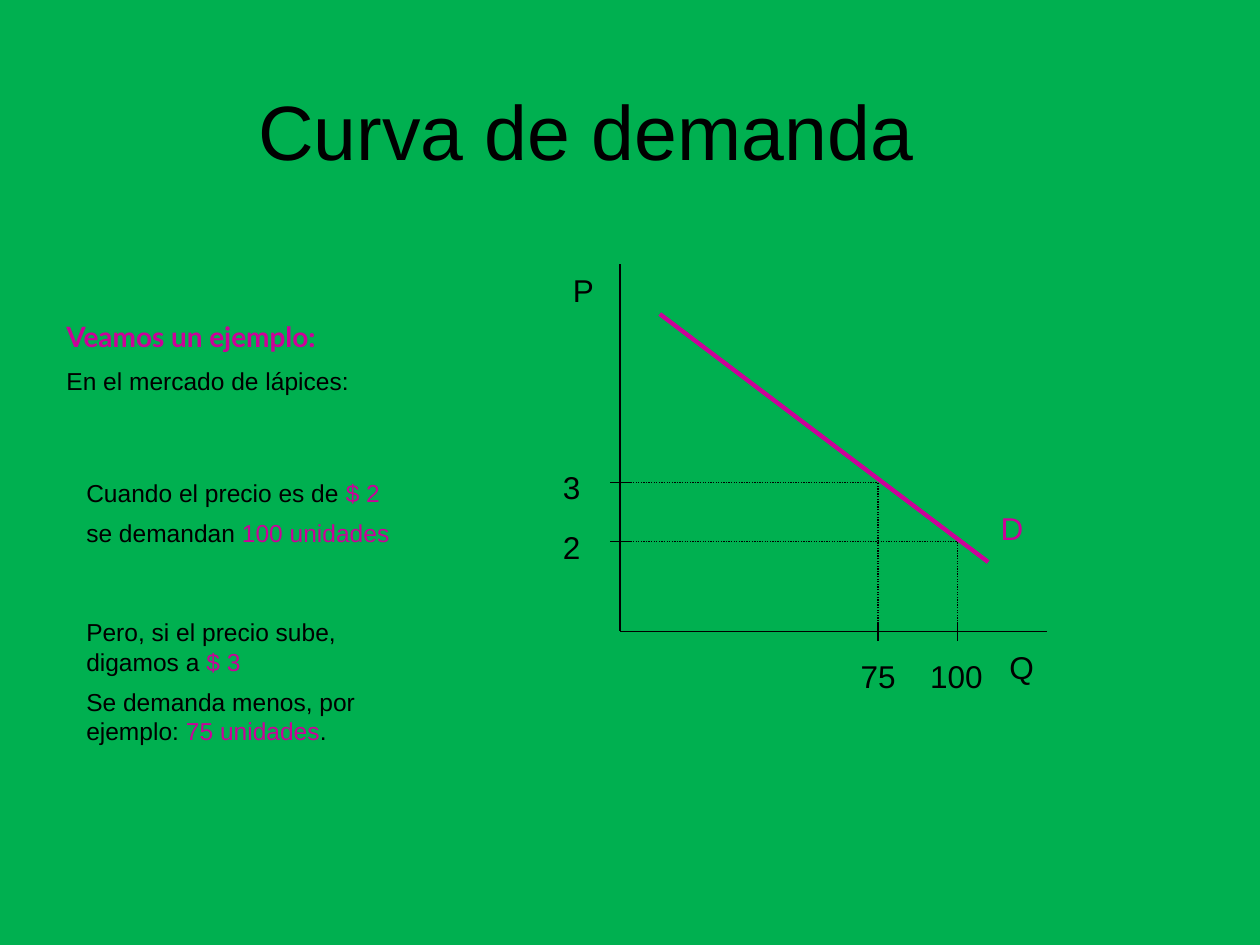
from dataclasses import dataclass

from lxml import etree
from pptx import Presentation
from pptx import util as u
from pptx.dml.color import RGBColor
from pptx.enum import dml, shapes, text
from pptx.oxml.ns import qn


@dataclass(frozen=True)
class Theme:
    ground: RGBColor = RGBColor(0x00, 0xB0, 0x50)
    ink: RGBColor = RGBColor(0x00, 0x00, 0x00)
    accent: RGBColor = RGBColor(0xCC, 0x00, 0x99)
    body_font: str = "Arial"
    heading_font: str = "Lato"
    title: int = 44
    label: int = 18
    heading: int = 16
    body: int = 14
    thin: float = 0.75
    thick: float = 2.5


THEME = Theme()


def style(span, size, color=THEME.ink, font=THEME.body_font, bold=False):
    span.font.size = u.Pt(size)
    span.font.name = font
    span.font.bold = bold
    span.font.color.rgb = color


def add_text(page, left, top, width, height):
    """Add an empty wrapping text box, measured in cm, and return its frame."""
    box = page.shapes.add_textbox(u.Cm(left), u.Cm(top), u.Cm(width), u.Cm(height))
    box.text_frame.word_wrap = True
    box.text_frame.auto_size = text.MSO_AUTO_SIZE.SHAPE_TO_FIT_TEXT
    return box.text_frame


def add_line(page, start, end, color=THEME.ink, weight=THEME.thin, dotted=False):
    line = page.shapes.add_connector(
        shapes.MSO_CONNECTOR.STRAIGHT, *(u.Cm(value) for value in (*start, *end)))
    line.line.color.rgb = color
    line.line.width = u.Pt(weight)
    if dotted:
        line.line.dash_style = dml.MSO_LINE.ROUND_DOT
    etree.SubElement(line._element.spPr, qn("a:effectLst"))


def place_title(page, left, top, width, height):
    title = page.shapes.title
    title.left, title.top = u.Cm(left), u.Cm(top)
    title.width, title.height = u.Cm(width), u.Cm(height)
    frame = title.text_frame
    frame.text = " Curva de demanda"
    frame.vertical_anchor = text.MSO_ANCHOR.MIDDLE
    frame.paragraphs[0].alignment = text.PP_ALIGN.CENTER
    style(frame.paragraphs[0].runs[0], THEME.title)


def build_example(page, left, top, width):
    # Heading and market
    frame = add_text(page, left, top, width, 1.83)
    frame.text = "Veamos un ejemplo:"
    style(frame.paragraphs[0].runs[0], THEME.heading, THEME.accent,
          THEME.heading_font, bold=True)
    para = frame.add_paragraph()
    para.text = "En el mercado de lápices:"
    para.space_before = u.Pt(THEME.body / 2)
    style(para.runs[0], THEME.body)

    # Statements: offset, width, height, then plain and accented text in turn
    statements = [
        (3.2, 7.2, 0.85, ["Cuando el precio es de ", "$ 2"]),
        (4, 7.6, 0.85, ["se demandan ", "100 unidades"]),
        (6, 7.2, 1.44, ["Pero, si el precio sube, digamos a ", "$ 3"]),
        (7.4, 7.2, 1.44, ["Se demanda menos, por ejemplo: ", "75 unidades", "."]),
    ]
    for offset, text_width, height, parts in statements:
        frame = add_text(page, left + 0.4, top + offset, text_width, height)
        for index, part in enumerate(parts):
            span = frame.paragraphs[0].add_run()
            span.text = part
            style(span, THEME.body, THEME.accent if index % 2 else THEME.ink)


def build_graph(page, left, top, width, height):
    def at(x, y):
        return left + x, top + y

    def label(words, x, y, label_width, color=THEME.ink):
        frame = add_text(page, *at(x, y), label_width, 1.02)
        frame.text = words
        style(frame.paragraphs[0].runs[0], THEME.label, color)

    # Axes
    add_line(page, at(0, 0), at(0, height))
    add_line(page, at(0, height), at(width, height))
    label("P", -1.2, 0, 1)
    label("Q", 7.6, 7.6, 1.2)

    # Demand curve
    add_line(page, at(0.8, 1), at(7.42, 6), THEME.accent, THEME.thick)
    label("D", 7.42, 4.8, 1, THEME.accent)

    # Points on the curve: ticks, dotted guides and values
    tick = 0.2
    points = [("2", 5.59, "100", 6.8, 1.8), ("3", 4.4, "75", 5.2, 1.4)]
    for price, y, quantity, x, value_width in points:
        add_line(page, at(-tick, y), at(tick, y))
        add_line(page, at(0, y), at(x, y), dotted=True)
        add_line(page, at(x, height - tick), at(x, height + tick))
        add_line(page, at(x, height), at(x, y), dotted=True)
        label(price, -1.4, y - 0.41, 0.9)
        label(quantity, x - value_width / 2 + 0.1, height + 0.4, value_width)


def main():
    deck = Presentation()
    deck.slide_width, deck.slide_height = u.Cm(25.4), u.Cm(19.05)
    page = deck.slides.add_slide(deck.slide_layouts.get_by_name("Title Only"))
    page.background.fill.solid()
    page.background.fill.fore_color.rgb = THEME.ground

    place_title(page, 1.7, 0.91, 19.8, 3.4)
    build_graph(page, 12.5, 5.33, 8.6, 7.4)
    build_example(page, 1.09, 6.32, 9)
    deck.save("out.pptx")


if __name__ == "__main__":
    main()
